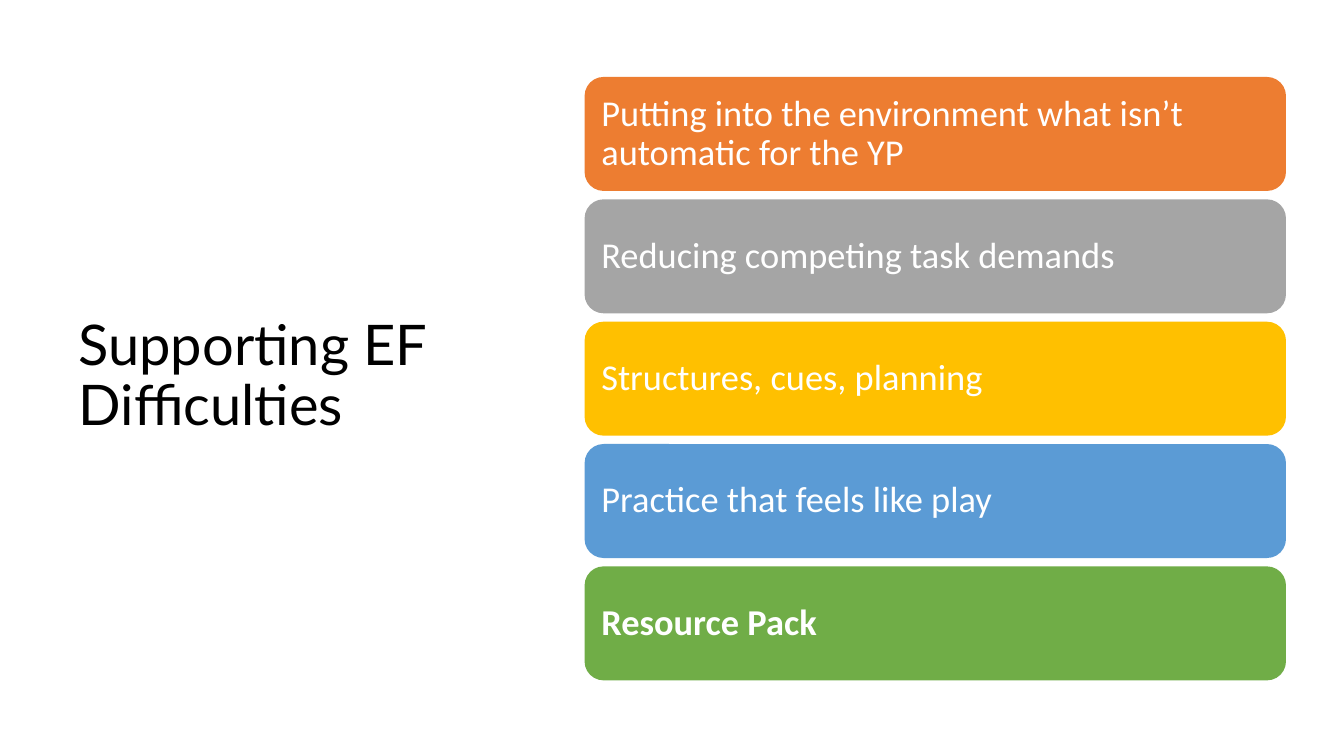
from pptx import Presentation
from pptx.dml.color import RGBColor
from pptx.enum.shapes import MSO_SHAPE
from pptx.enum.text import MSO_ANCHOR, MSO_AUTO_SIZE, PP_ALIGN
from pptx.util import Pt

ROUNDED = MSO_SHAPE.ROUNDED_RECTANGLE
MIDDLE = MSO_ANCHOR.MIDDLE
LEFT = PP_ALIGN.LEFT
NO_AUTOFIT = MSO_AUTO_SIZE.NONE

BLACK = RGBColor(0x00, 0x00, 0x00)
WHITE = RGBColor(0xFF, 0xFF, 0xFF)
ORANGE = RGBColor(0xED, 0x7D, 0x31)
GRAY = RGBColor(0xA5, 0xA5, 0xA5)
GOLD = RGBColor(0xFF, 0xC0, 0x00)
BLUE = RGBColor(0x5B, 0x9B, 0xD5)
GREEN = RGBColor(0x70, 0xAD, 0x47)

STRATEGIES = [
    ("Putting into the environment what isn’t automatic for the YP", ORANGE, False),
    ("Reducing competing task demands", GRAY, False),
    ("Structures, cues, planning", GOLD, False),
    ("Practice that feels like play", BLUE, False),
    ("Resource Pack", GREEN, True),
]
BAR_LEFT, BAR_TOP, BAR_WIDTH, BAR_HEIGHT = 417.6, 55, 501, 81.4
BAR_PITCH = 87.4


def write_text(frame, text, font_name, size, color, bold=False):
    """Fill a frame with one left-aligned, vertically centred paragraph."""
    frame.word_wrap = True
    frame.auto_size = NO_AUTOFIT
    frame.vertical_anchor = MIDDLE
    paragraph = frame.paragraphs[0]
    paragraph.alignment = LEFT
    paragraph.line_spacing = 0.9
    run = paragraph.add_run()
    run.text = text
    run.font.name = font_name
    run.font.size = Pt(size)
    run.font.bold = bold
    run.font.color.rgb = color


prs = Presentation()
prs.slide_width, prs.slide_height = Pt(960), Pt(540)
slide = prs.slides.add_slide(prs.slide_layouts[5])

title = slide.shapes.title
title.left, title.top, title.width, title.height = Pt(49), Pt(91.4), Pt(283.7), Pt(356.4)
write_text(title.text_frame, "Supporting EF Difficulties", "Lato", 40, BLACK)

for row, (strategy, color, bold) in enumerate(STRATEGIES):
    bar = slide.shapes.add_shape(
        ROUNDED, Pt(BAR_LEFT), Pt(BAR_TOP + row * BAR_PITCH), Pt(BAR_WIDTH), Pt(BAR_HEIGHT)
    )
    bar.shadow.inherit = False
    bar.fill.solid()
    bar.fill.fore_color.rgb = color
    bar.line.fill.background()
    frame = bar.text_frame
    frame.margin_left = frame.margin_right = Pt(8)
    frame.margin_top = frame.margin_bottom = Pt(4)
    write_text(frame, strategy, "Calibri", 26, WHITE, bold)

prs.save("out.pptx")
